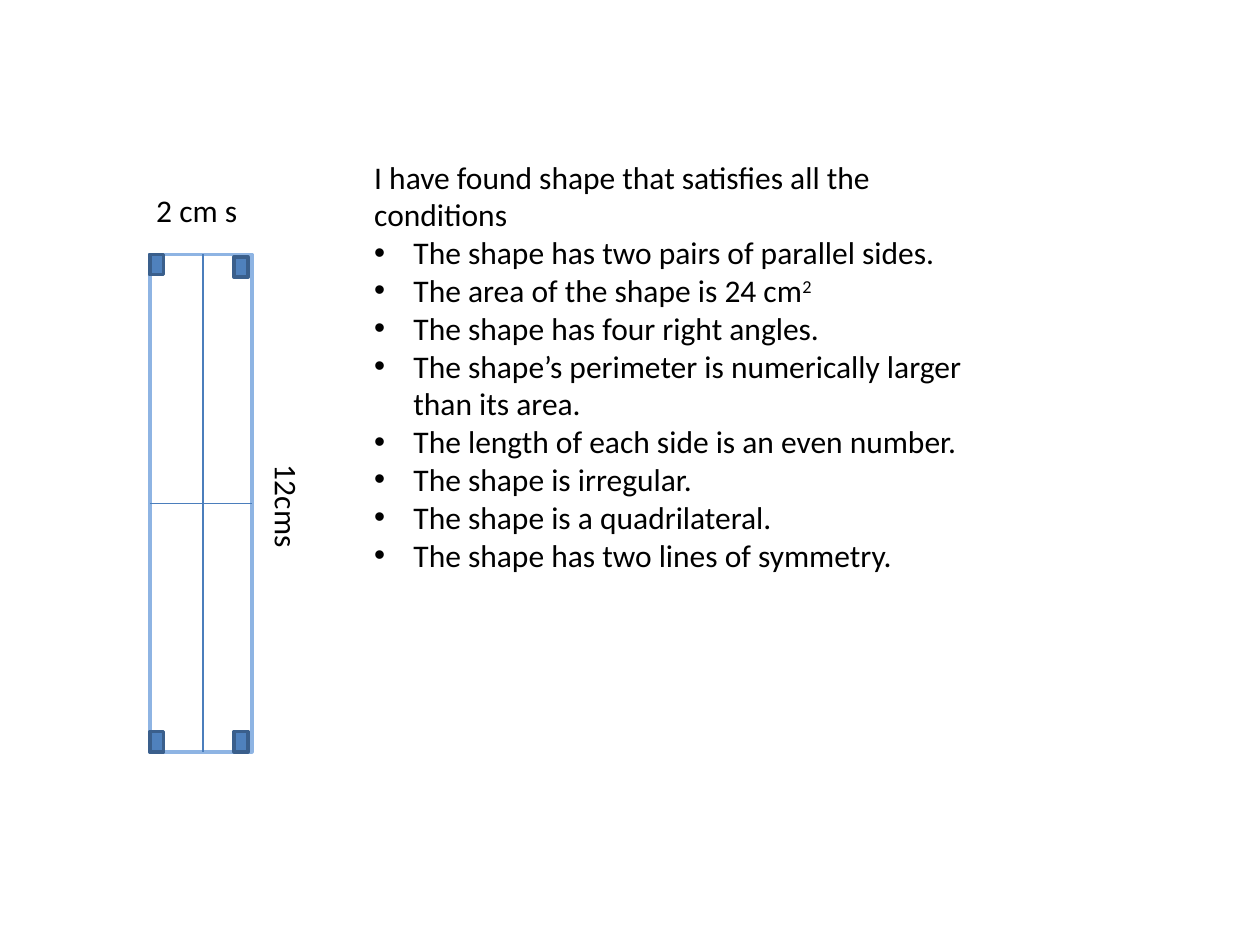
import pptx
import pptx.dml.color
import pptx.enum.shapes
import pptx.enum.text
import pptx.oxml.ns
import pptx.util
import lxml.etree
from pptx.util import Cm

INTRO = "I have found shape that satisfies all the conditions"
CONDITIONS = [
    ("The shape has two pairs of parallel sides.", ""),
    ("The area of the shape is 24 cm", "2"),
    ("The shape has four right angles.", ""),
    ("The shape’s perimeter is numerically larger than its area.", ""),
    ("The length of each side is an even number.", ""),
    ("The shape is irregular.", ""),
    ("The shape is a quadrilateral.", ""),
    ("The shape has two lines of symmetry.", ""),
]
SIDE_LABELS = [
    ("2 cm s", (2.9, 3.73, 2.39, 1.02), False),
    ("12cms", (5.03, 9.12, 1.27, 2.79), True),
]
RECTANGLE = (3.02, 5.13, 2.06, 10.03)
CORNER_SIZE = (0.28, 0.41)
CORNER_INSETS = {"left": 0, "right": 0.08, "top right": 0.05}
SYMMETRY_X = 4.09
CONDITIONS_AREA = (7.29, 3.05, 12.4, 9.5)

THEME = {
    "font": "Calibri",
    "size": 18,
    "text": "000000",
    "paper": "FFFFFF",
    "outline": "8EB4E3",
    "corner": "4F81BD",
    "corner line": "3A5F8C",
    "symmetry": "4B7EBC",
    "thick": 2,
    "thin": 0.75,
}


def color(name):
    return pptx.dml.color.RGBColor.from_string(THEME[name])


def lengths(values):
    return [Cm(value) for value in values]


def format_run(run):
    run.font.name = THEME["font"]
    run.font.size = pptx.util.Pt(THEME["size"])
    run.font.color.rgb = color("text")


def add_rectangle(page, area, fill, line):
    shape = page.shapes.add_shape(
        pptx.enum.shapes.MSO_SHAPE.RECTANGLE, *lengths(area))
    shape.shadow.inherit = False
    shape.fill.solid()
    shape.fill.fore_color.rgb = color(fill)
    shape.line.color.rgb = color(line)
    shape.line.width = pptx.util.Pt(THEME["thick"])


def add_symmetry_line(page, ends):
    line = page.shapes.add_connector(
        pptx.enum.shapes.MSO_CONNECTOR.STRAIGHT, *lengths(ends))
    line.line.color.rgb = color("symmetry")
    line.line.width = pptx.util.Pt(THEME["thin"])
    lxml.etree.SubElement(
        line.element.spPr, pptx.oxml.ns.qn("a:effectLst"))


def add_side_label(page, text, area, vertical):
    box = page.shapes.add_textbox(*lengths(area))
    box.text_frame.word_wrap = True
    box.text_frame.text = text
    format_run(box.text_frame.paragraphs[0].runs[0])
    if vertical:
        box.element.txBody.bodyPr.set("vert", "vert")


def set_bullet(para, indent, character):
    properties = para._p.get_or_add_pPr()
    properties.set("marL", str(indent))
    properties.set("indent", str(-indent))
    if character:
        font = lxml.etree.SubElement(
            properties, pptx.oxml.ns.qn("a:buFont"))
        font.set("typeface", "Arial")
        bullet = lxml.etree.SubElement(
            properties, pptx.oxml.ns.qn("a:buChar"))
        bullet.set("char", character)
    else:
        lxml.etree.SubElement(properties, pptx.oxml.ns.qn("a:buNone"))


def fill_conditions(body):
    body.left, body.top, body.width, body.height = lengths(CONDITIONS_AREA)
    frame = body.text_frame
    frame.word_wrap = True
    frame.auto_size = pptx.enum.text.MSO_AUTO_SIZE.NONE
    frame.vertical_anchor = pptx.enum.text.MSO_ANCHOR.TOP
    frame.text = INTRO
    for text, power in CONDITIONS:
        para = frame.add_paragraph()
        para.text = text
        if power:
            span = para.add_run()
            span.text = power
            span.font._element.set("baseline", "30000")
    for index, para in enumerate(frame.paragraphs):
        para.space_before = pptx.util.Pt(0)
        set_bullet(para, Cm(0.79) if index else 0, "•" if index else "")
        for run in para.runs:
            format_run(run)


def draw_rectangle(page):
    left, top, width, height = RECTANGLE
    right, bottom = left + width, top + height
    middle = top + height / 2
    add_rectangle(page, RECTANGLE, "paper", "outline")
    add_symmetry_line(page, (SYMMETRY_X, top, SYMMETRY_X, bottom))
    add_symmetry_line(page, (left, middle, right, middle))

    corner_width, corner_height = CORNER_SIZE
    left_x = left + CORNER_INSETS["left"]
    right_x = right - corner_width - CORNER_INSETS["right"]
    bottom_y = bottom - corner_height
    corners = [
        (left_x, top),
        (left_x, bottom_y),
        (right_x, top + CORNER_INSETS["top right"]),
        (right_x, bottom_y),
    ]
    for corner in corners:
        add_rectangle(page, corner + CORNER_SIZE, "corner", "corner line")


def main():
    deck = pptx.Presentation()
    deck.slide_width, deck.slide_height = Cm(25.4), Cm(19.05)
    page = deck.slides.add_slide(deck.slide_layouts[1])
    title = page.shapes.title.element
    title.getparent().remove(title)
    fill_conditions(page.placeholders[1])
    draw_rectangle(page)
    for text, area, vertical in SIDE_LABELS:
        add_side_label(page, text, area, vertical)
    deck.save("out.pptx")


if __name__ == "__main__":
    main()
